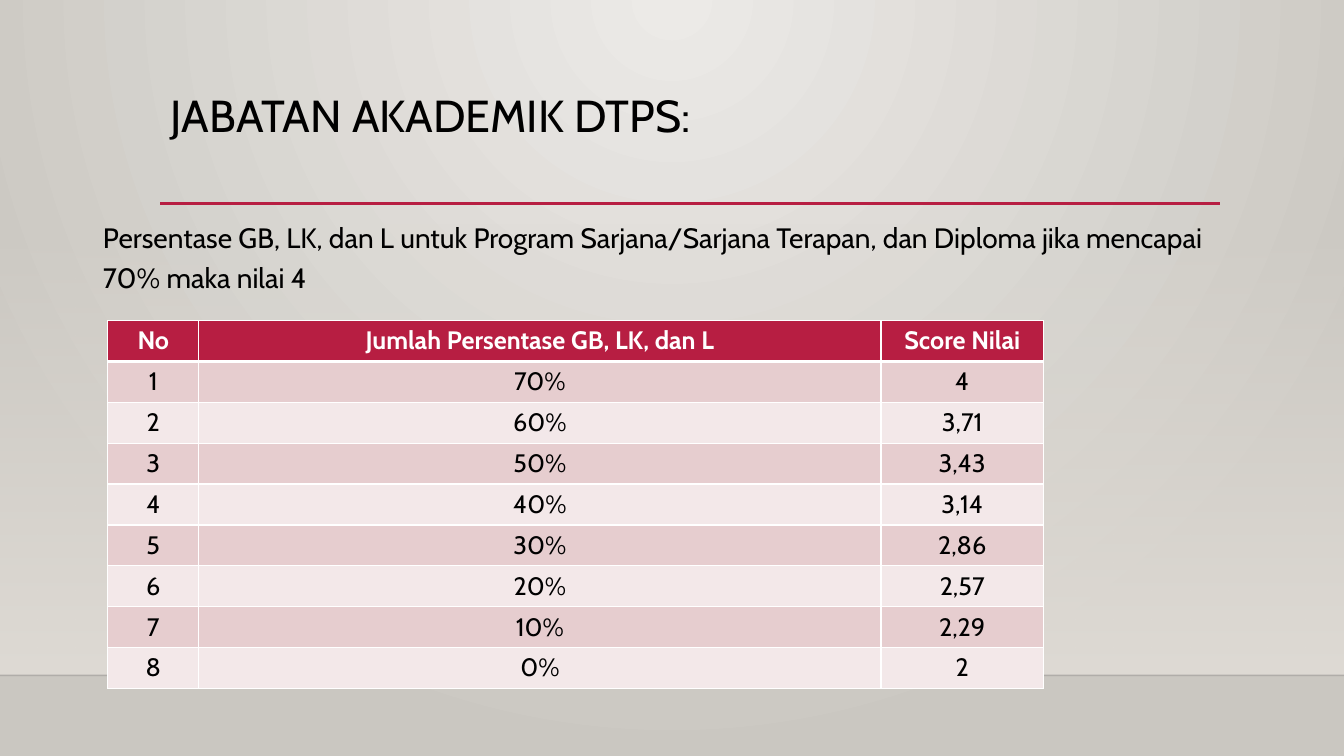
from lxml import etree
from pptx import Presentation
from pptx.dml.color import RGBColor
from pptx.enum.shapes import MSO_CONNECTOR, MSO_SHAPE
from pptx.enum.text import MSO_ANCHOR, MSO_AUTO_SIZE, PP_ALIGN
from pptx.oxml.ns import qn
from pptx.util import Inches, Pt

STRAIGHT = MSO_CONNECTOR.STRAIGHT
RECTANGLE = MSO_SHAPE.RECTANGLE
TOP = MSO_ANCHOR.TOP
NO_FIT = MSO_AUTO_SIZE.NONE
LEFT, CENTER = PP_ALIGN.LEFT, PP_ALIGN.CENTER

WIDTH, HEIGHT = 13.33, 7.5
FLOOR = 6.7
FONT = "Cabin"
CRIMSON, BLACK, WHITE = "B71E42", "000000", "FFFFFF"
STRIPES = "E6CDCF", "F3E8E9"
HEADINGS = "No", "Jumlah Persentase GB, LK, dan L", "Score Nilai"
SCORES = [
    ("70%", "4"), ("60%", "3,71"), ("50%", "3,43"), ("40%", "3,14"),
    ("30%", "2,86"), ("20%", "2,57"), ("10%", "2,29"), ("0%", "2"),
]
COLUMN_WIDTHS = 0.9, 6.76, 1.61


def color(hex_code):
    return RGBColor.from_string(hex_code)


def add_child(parent, tag, **attributes):
    return etree.SubElement(parent, qn(tag), attributes)


def set_alpha(element, percent):
    add_child(element.find(".//" + qn("a:srgbClr")), "a:alpha", val=str(percent * 1000))


def set_gradient(fill, start, end):
    fill.gradient()
    for stop, hex_code in zip(fill.gradient_stops, (start, end)):
        stop.color.rgb = color(hex_code)


def write(paragraph, words, size, hex_code, bold=False, align=LEFT):
    paragraph.alignment = align
    run = paragraph.add_run()
    run.text = words
    run.font.name = FONT
    run.font.size = Pt(size)
    run.font.bold = bold
    run.font.color.rgb = color(hex_code)


def add_rule(slide, left, right, y, hex_code, weight):
    rule = slide.shapes.add_connector(
        STRAIGHT, Inches(left), Inches(y), Inches(right), Inches(y))
    rule.line.color.rgb = color(hex_code)
    rule.line.width = Pt(weight)
    add_child(rule.element.spPr, "a:effectLst")
    return rule


def draw_backdrop(slide):
    set_gradient(slide.background.fill, "ECEAE7", "CAC7C1")
    glow = slide.element.find(".//" + qn("a:gradFill"))
    for linear in glow.findall(qn("a:lin")):
        glow.remove(linear)
    circle = add_child(glow, "a:path", path="circle")
    add_child(circle, "a:fillToRect", l="43000", t="0", r="43000", b="100000")

    wall_top = 2.21
    wall = slide.shapes.add_shape(
        RECTANGLE, 0, Inches(wall_top), Inches(WIDTH), Inches(FLOOR - wall_top))
    wall.shadow.inherit = False
    wall.line.fill.background()
    set_gradient(wall.fill, "DFDBD5", "DFDBD5")
    wall.fill.gradient_angle = 270
    set_alpha(wall.element.spPr.find(qn("a:gradFill")), 0)

    edge = add_rule(slide, 0, WIDTH, FLOOR, "000001", 1)
    set_alpha(edge.element.spPr.find(qn("a:ln")), 20)
    add_rule(slide, 1.59, 12.1, 2.02, CRIMSON, 2.5)


def fill_placeholder(slide, holder, box, words, size, spacing):
    slide.shapes.element.append(holder.element)
    holder.left, holder.top, holder.width, holder.height = map(Inches, box)
    frame = holder.text_frame
    frame.word_wrap = True
    frame.auto_size = NO_FIT
    frame.vertical_anchor = TOP
    paragraph = frame.paragraphs[0]
    properties = paragraph._p.get_or_add_pPr()
    properties.set("marL", "0")
    properties.set("indent", "0")
    add_child(properties, "a:buNone")
    paragraph.line_spacing = spacing
    paragraph.space_before = Pt(0)
    write(paragraph, words, size, BLACK)


def set_borders(cell, top, bottom):
    properties = cell._tc.get_or_add_tcPr()
    for side, weight in zip("LRTB", (1, 1, top, bottom)):
        border = add_child(properties, "a:ln" + side, w=str(Pt(weight)))
        add_child(add_child(border, "a:solidFill"), "a:srgbClr", val=WHITE)


def draw_score_table(slide, left, top, width, height):
    rows = [HEADINGS] + [(str(no), *score) for no, score in enumerate(SCORES, 1)]
    table = slide.shapes.add_table(
        len(rows), len(HEADINGS),
        Inches(left), Inches(top), Inches(width), Inches(height)).table
    for column, share in zip(table.columns, COLUMN_WIDTHS):
        column.width = Inches(width * share / sum(COLUMN_WIDTHS))
    for r, row in enumerate(rows):
        header = r == 0
        for c, words in enumerate(row):
            cell = table.cell(r, c)
            set_borders(cell, 3 if r == 1 else 1, 3 if header else 1)
            cell.fill.solid()
            cell.fill.fore_color.rgb = color(CRIMSON if header else STRIPES[(r - 1) % 2])
            write(cell.text_frame.paragraphs[0], words, 18,
                  WHITE if header else BLACK, header, CENTER)


def main():
    deck = Presentation()
    deck.slide_width, deck.slide_height = Inches(WIDTH), Inches(HEIGHT)
    slide = deck.slides.add_slide(deck.slide_layouts[1])
    draw_backdrop(slide)
    fill_placeholder(slide, slide.shapes.title, (1.59, 0.88, 10.5, 1.15),
                     "JABATAN AKADEMIK DTPS:", 32, 0.9)
    fill_placeholder(slide, slide.placeholders[1], (0.92, 2.07, 11.5, 4.76),
                     "Persentase GB, LK, dan L untuk Program Sarjana/Sarjana Terapan, "
                     "dan Diploma jika mencapai 70% maka nilai 4", 20, 1.2)
    draw_score_table(slide, 1.07, 3.18, 9.28, 3.65)
    deck.save("out.pptx")


if __name__ == "__main__":
    main()
